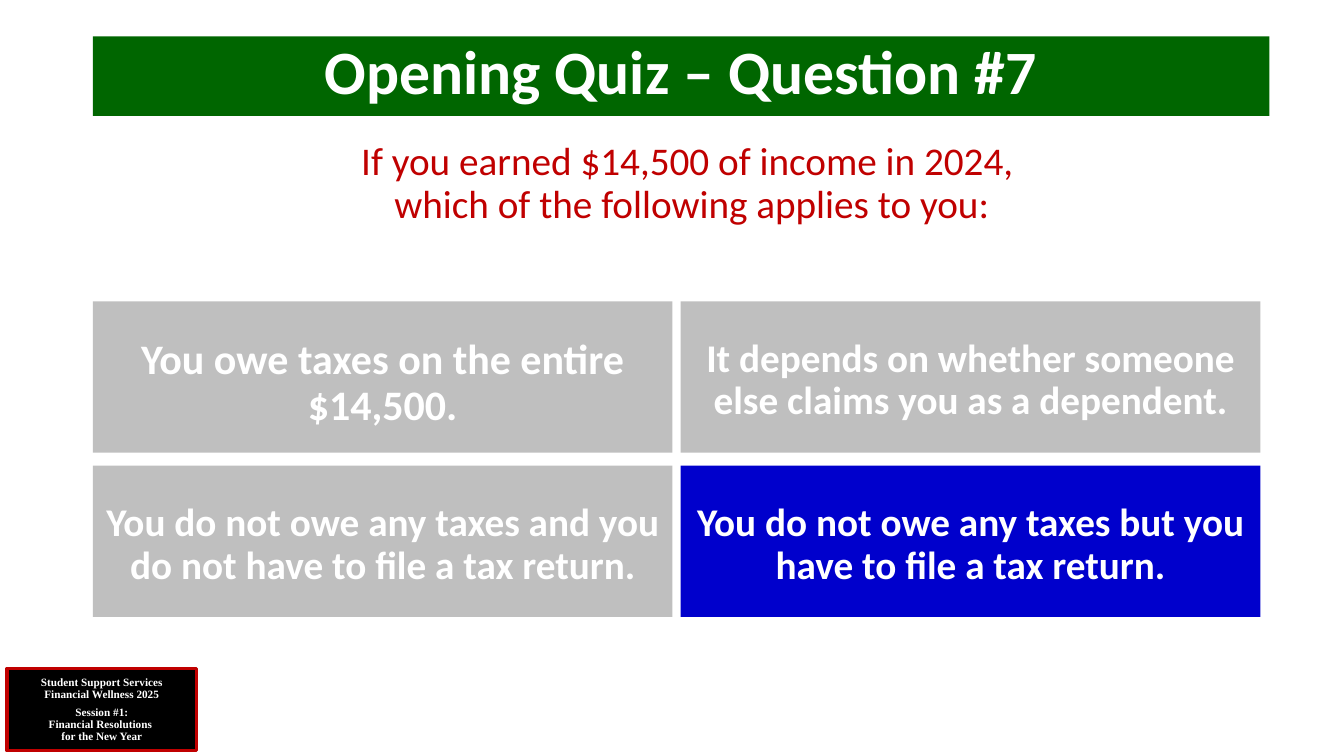
"""Builds the quiz slide on taxes owed for $14,500 of income."""
import pptx
import pptx.dml.color
import pptx.enum.shapes
import pptx.enum.text
import pptx.util

Inches = pptx.util.Inches
Pt = pptx.util.Pt
ANCHOR = pptx.enum.text.MSO_ANCHOR

COLORS = {
    "white": "FFFFFF", "black": "000000", "green": "006600",
    "red": "C00000", "gray": "BFBFBF", "blue": "0000CC",
}
LEFT = 0.92
ANSWER_TOP, ANSWER_WIDTH, ANSWER_HEIGHT = 2.99, 5.75, 1.5
COLUMN_STEP, ROW_STEP = 5.83, 1.63


def color(name):
    return pptx.dml.color.RGBColor.from_string(COLORS[name])


def write(shape, lines, size, text_color="white", bold=True,
          font="Calibri", anchor=ANCHOR.TOP, top_inset=0.05):
    frame = shape.text_frame
    frame.text = "\n".join(lines)
    frame.word_wrap = True
    frame.auto_size = pptx.enum.text.MSO_AUTO_SIZE.NONE
    frame.vertical_anchor = anchor
    frame.margin_top = Inches(top_inset)
    for paragraph in frame.paragraphs:
        paragraph.alignment = pptx.enum.text.PP_ALIGN.CENTER
        paragraph.line_spacing = 0.9
        paragraph.space_before = Pt(0)
        paragraph.font.name = font
        paragraph.font.size = Pt(size)
        paragraph.font.bold = bold
        paragraph.font.color.rgb = color(text_color)


presentation = pptx.Presentation()
presentation.slide_width = Inches(13.33)
presentation.slide_height = Inches(7.5)
slide = presentation.slides.add_slide(presentation.slide_layouts[5])

title = slide.shapes.title
title.left, title.top = Inches(LEFT), Inches(0.36)
title.width, title.height = Inches(11.67), Inches(0.79)
title.fill.solid()
title.fill.fore_color.rgb = color("green")
write(title, ["Opening Quiz – Question #7"], 44)

session_label = slide.shapes.add_shape(
    pptx.enum.shapes.MSO_SHAPE.RECTANGLE,
    Inches(0.07), Inches(6.63), Inches(1.88), Inches(0.82))
session_label.shadow.inherit = False
session_label.fill.solid()
session_label.fill.fore_color.rgb = color("black")
session_label.line.color.rgb = color("red")
session_label.line.width = Pt(2.25)
write(session_label,
      ["Student Support Services", "Financial Wellness 2025",
       "Session #1:\vFinancial Resolutions \vfor the New Year"],
      8, font="Times New Roman", anchor=ANCHOR.MIDDLE)
session_label.text_frame.paragraphs[2].space_before = Pt(4)

question = slide.shapes.add_textbox(
    Inches(LEFT), Inches(1.36), Inches(11.88), Inches(1.5))
write(question,
      ["If you earned $14,500 of income in 2024, \vwhich of the following applies to you:"],
      28, text_color="red", bold=False)

answers = [
    ("You owe taxes on the entire $14,500.", 30, "gray"),
    ("It depends on whether someone else claims you as a dependent.", 28, "gray"),
    ("You do not owe any taxes and you do not have to file a tax return.", 28, "gray"),
    ("You do not owe any taxes but you have to file a tax return.", 28, "blue"),
]
for index, (answer, size, fill) in enumerate(answers):
    row, column = divmod(index, 2)
    box = slide.shapes.add_shape(
        pptx.enum.shapes.MSO_SHAPE.RECTANGLE,
        Inches(LEFT + column * COLUMN_STEP), Inches(ANSWER_TOP + row * ROW_STEP),
        Inches(ANSWER_WIDTH), Inches(ANSWER_HEIGHT))
    box.shadow.inherit = False
    box.fill.solid()
    box.fill.fore_color.rgb = color(fill)
    box.line.fill.background()
    write(box, [answer], size, top_inset=0.37)

presentation.save("out.pptx")
